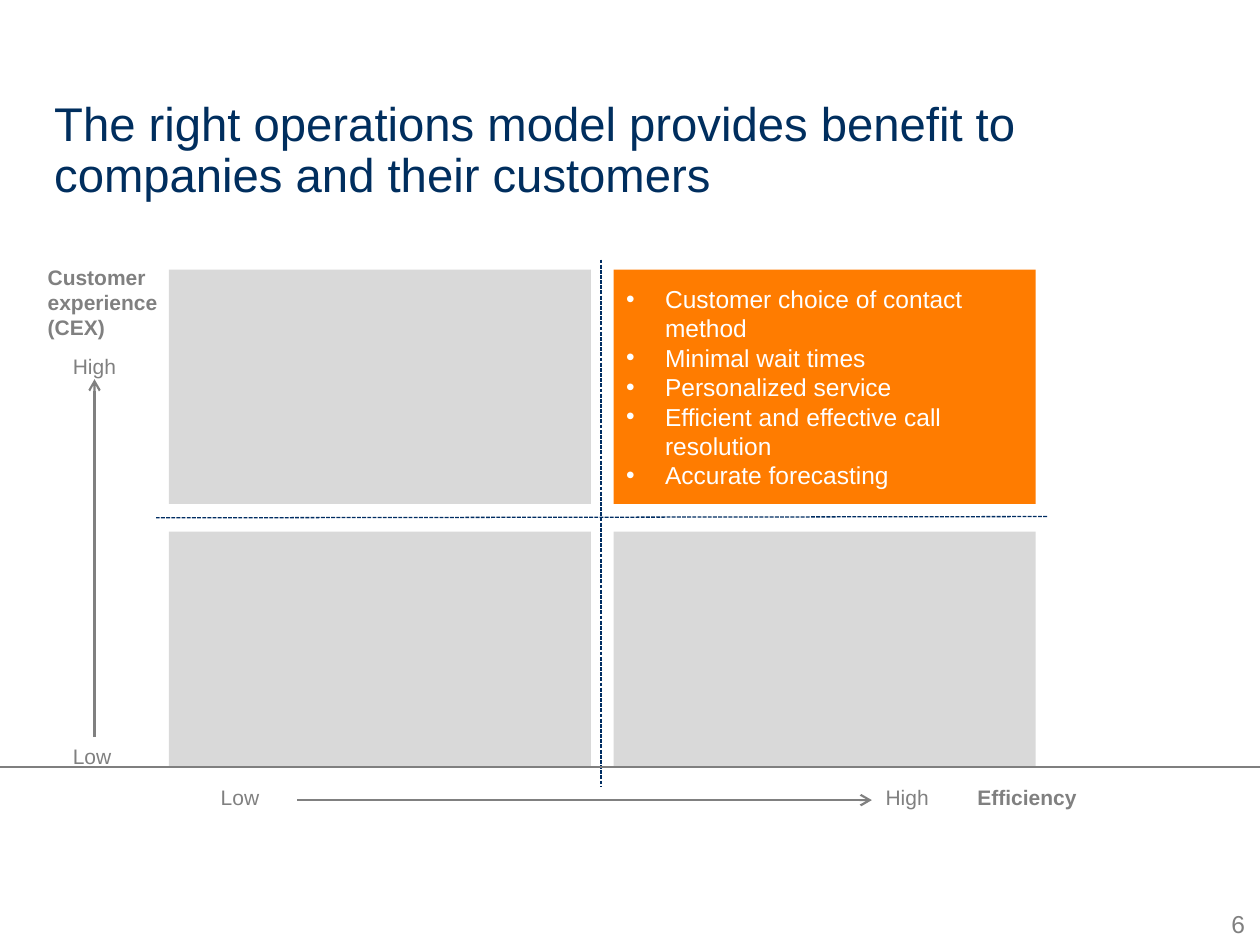
from dataclasses import dataclass

from lxml import etree
from pptx import Presentation
from pptx.dml.color import RGBColor
from pptx.enum.dml import MSO_LINE
from pptx.enum.shapes import MSO_CONNECTOR, MSO_SHAPE
from pptx.enum.text import MSO_ANCHOR, PP_ALIGN
from pptx.oxml.ns import qn
from pptx.util import Inches, Pt

STRAIGHT = MSO_CONNECTOR.STRAIGHT
RECTANGLE = MSO_SHAPE.RECTANGLE
DASH = MSO_LINE.SQUARE_DOT
TOP, MIDDLE = MSO_ANCHOR.TOP, MSO_ANCHOR.MIDDLE
LEFT, CENTER, RIGHT = PP_ALIGN.LEFT, PP_ALIGN.CENTER, PP_ALIGN.RIGHT


@dataclass(frozen=True)
class Theme:
    font: str = "Arial"
    title: str = "002E5E"
    divider: str = "002D62"
    label: str = "808080"
    baseline: str = "7F7F7F"
    quadrant: str = "D9D9D9"
    highlight: str = "FF7C00"
    on_highlight: str = "FFFFFF"
    title_size: int = 27
    body_size: int = 14
    label_size: int = 12


THEME = Theme()


def write(shape, lines, size, color, bold=False, align=LEFT, anchor=TOP, bullet=None):
    """Fill a shape with one paragraph per line, with an optional hanging bullet."""
    frame = shape.text_frame
    frame.word_wrap = True
    frame.vertical_anchor = anchor
    frame.text = "\n".join(lines)
    for paragraph in frame.paragraphs:
        paragraph.alignment = align
        if bullet:
            properties = paragraph._p.get_or_add_pPr()
            properties.set("marL", str(Inches(0.31)))
            properties.set("indent", str(Inches(-0.31)))
            etree.SubElement(properties, qn("a:buFont"), typeface=THEME.font)
            etree.SubElement(properties, qn("a:buChar"), char=bullet)
        for name, value in {"name": THEME.font, "size": Pt(size), "bold": bold}.items():
            setattr(paragraph.font, name, value)
        paragraph.font.color.rgb = RGBColor.from_string(color)
    return frame


def add_line(start, end, color, width, dash=None, arrow=False):
    line = slide.shapes.add_connector(STRAIGHT, *map(Inches, start + end))
    line.line.color.rgb = RGBColor.from_string(color)
    line.line.width = Pt(width)
    if dash:
        line.line.dash_style = dash
    if arrow:
        etree.SubElement(line.line._get_or_add_ln(), qn("a:tailEnd"), type="arrow")
    etree.SubElement(line._element.spPr, qn("a:effectLst"))


presentation = Presentation()
presentation.slide_width = Inches(10)
presentation.slide_height = Inches(7.5)
slide = presentation.slides.add_slide(presentation.slide_layouts[5])

# Title
title = slide.shapes.title
title_place = {"left": 0.33, "top": 0.75, "width": 7.97, "height": 0.56}
for name, value in title_place.items():
    setattr(title, name, Inches(value))
title_text = "The right operations model provides benefit to companies and their customers"
title_frame = write(title, [title_text], THEME.title_size, THEME.title)
title_frame.paragraphs[0].line_spacing = 0.9

# Dividers between the quadrants
add_line((4.77, 2.06), (4.77, 6.24), THEME.divider, 0.75, dash=DASH)
add_line((8.31, 4.1), (1.24, 4.11), THEME.divider, 0.75, dash=DASH)

# Axis labels: text, place, bold, alignment
labels = [
    ("Customer experience (CEX)", (0.28, 2.05, 1.12, 0.71), True, LEFT),
    ("Efficiency", (7.66, 6.18, 1.63, 0.3), True, LEFT),
    ("High", (0.48, 2.76, 0.54, 0.3), False, LEFT),
    ("Low", (0.48, 5.85, 0.54, 0.3), False, LEFT),
    ("Low", (1.29, 6.18, 1.23, 0.3), False, CENTER),
    ("High", (6.47, 6.18, 1.46, 0.3), False, CENTER),
]
for text, place, bold, align in labels:
    label = slide.shapes.add_textbox(*map(Inches, place))
    write(label, [text], THEME.label_size, THEME.label, bold, align)

# Axis arrows
add_line((2.36, 6.35), (6.92, 6.35), THEME.label, 1.25, arrow=True)
add_line((0.75, 5.85), (0.75, 3.01), THEME.label, 1.25, arrow=True)

# Quadrants, the high-high one carrying the benefits
benefits = [
    "Customer choice of contact method",
    "Minimal wait times",
    "Personalized service",
    "Efficient and effective call resolution",
    "Accurate forecasting",
]
for row in range(2):
    for column in range(2):
        left, top = 1.34 + 3.53 * column, 2.14 + 2.08 * row
        quadrant = slide.shapes.add_shape(
            RECTANGLE, Inches(left), Inches(top), Inches(3.35), Inches(1.86))
        best = (row, column) == (0, 1)
        quadrant.shadow.inherit = False
        quadrant.fill.solid()
        quadrant.fill.fore_color.rgb = RGBColor.from_string(
            THEME.highlight if best else THEME.quadrant)
        quadrant.line.fill.background()
        if best:
            write(quadrant, benefits, THEME.body_size, THEME.on_highlight,
                  anchor=MIDDLE, bullet="•")

add_line((0, 6.09), (10, 6.09), THEME.baseline, 1.25)

# Page number
page_number = slide.shapes.add_textbox(*map(Inches, (9.64, 7.28, 0.24, 0.17)))
number_frame = write(page_number, ["6"], THEME.body_size, THEME.label, align=RIGHT)
number_frame.paragraphs[0].line_spacing = 0.7
for side in ("left", "top", "right", "bottom"):
    setattr(number_frame, f"margin_{side}", 0)

presentation.save("out.pptx")
